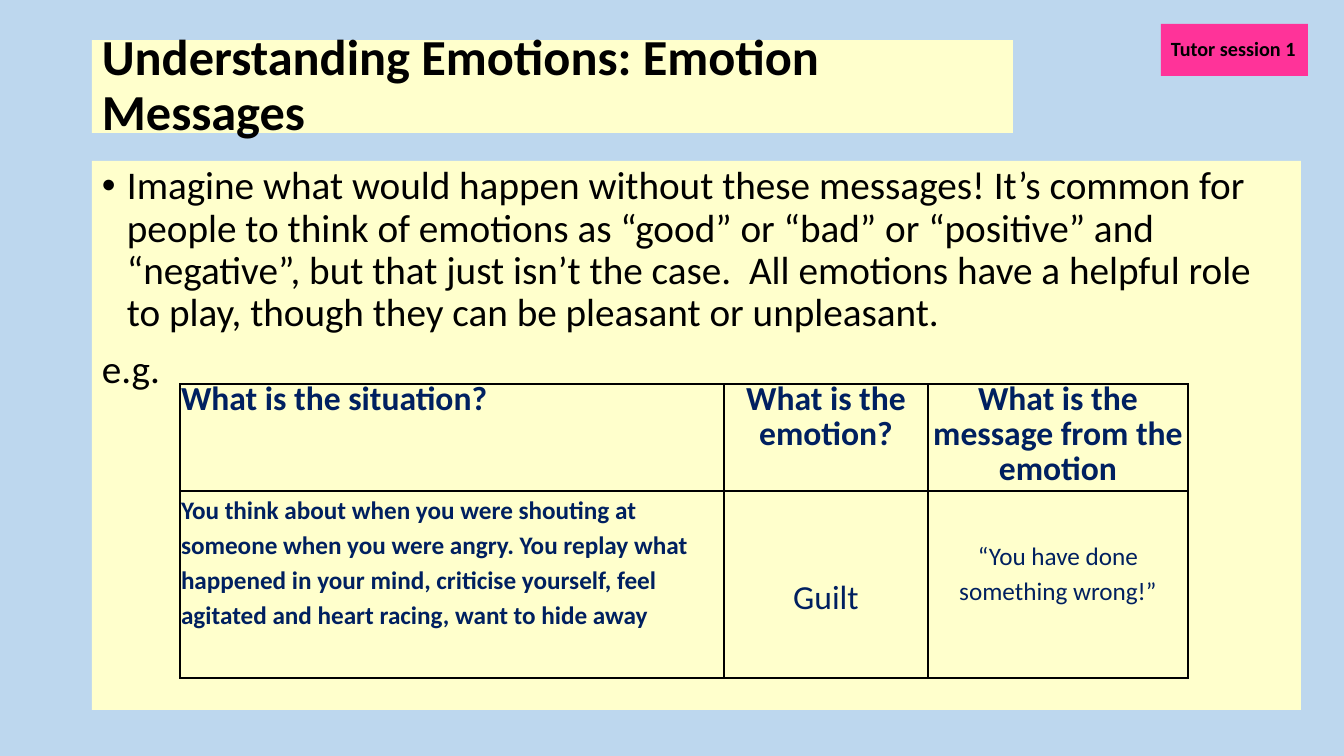
from lxml.etree import SubElement
from pptx import Presentation
from pptx.dml.color import RGBColor
from pptx.enum.shapes import MSO_SHAPE
from pptx.enum.text import MSO_ANCHOR, PP_ALIGN
from pptx.oxml.ns import qn
from pptx.util import Pt

WIDTH, HEIGHT = 1344, 756
EMU_PER_PX = 12192000 / WIDTH
BACKGROUND, CREAM, PINK = "BDD7EE", "FFFFCC", "FF3399"
BLACK, NAVY = "000000", "002060"

TITLE = "Understanding Emotions: Emotion Messages"
TAG = "Tutor session 1"
BODY = [
    "Imagine what would happen without these messages! It’s common for people "
    "to think of emotions as “good” or “bad” or “positive” and “negative”, but "
    "that just isn’t the case.\u00a0 All emotions have a helpful role to play, "
    "though they can be pleasant or unpleasant.",
    "e.g.",
]

COLUMNS = [544, 204, 260]
ROWS = [107, 187]
# Each cell: text, size, bold, top margin in px
CELLS = [
    [
        ("What is the situation?", 24, True, 1),
        ("What is the emotion?", 24, True, 1),
        ("What is the message from the emotion", 24, True, 1),
    ],
    [
        ("You think about when you were shouting at someone when you were angry. "
         "You replay what happened in your mind, criticise yourself, feel agitated "
         "and heart racing, want to hide away", 18, True, 1),
        ("Guilt", 24, False, 93),
        ("“You have done something wrong!”", 18, False, 47),
    ],
]


def px(length):
    return round(length * EMU_PER_PX)


def color(value):
    return RGBColor.from_string(value)


def paint(fill, value):
    fill.solid()
    fill.fore_color.rgb = color(value)


def style(para, size, bold, value, spacing, align=PP_ALIGN.LEFT):
    para.alignment = align
    para.line_spacing = spacing
    font = para.font
    font.name, font.size, font.bold = "Calibri", Pt(size), bold
    font.color.rgb = color(value)


def add_panel(page, bounds, fill, lines, size, bold, anchor=MSO_ANCHOR.MIDDLE):
    """Add a filled rectangle with left-aligned lines and return its paragraphs."""
    box = page.shapes.add_shape(MSO_SHAPE.RECTANGLE, *map(px, bounds))
    box.shadow.inherit = False
    paint(box.fill, fill)
    box.line.fill.background()
    frame = box.text_frame
    frame.word_wrap = True
    frame.vertical_anchor = anchor
    frame.text = "\n".join(lines)
    for para in frame.paragraphs:
        style(para, size, bold, BLACK, 0.9)
    return frame.paragraphs


def add_bullet(para, indent):
    properties = para._p.get_or_add_pPr()
    properties.set("marL", str(px(indent)))
    properties.set("indent", str(-px(indent)))
    SubElement(properties, qn("a:buFont"), typeface="Arial")
    SubElement(properties, qn("a:buChar"), char="•")


def add_borders(cell):
    properties = cell._tc.get_or_add_tcPr()
    for index, side in enumerate(("a:lnL", "a:lnR", "a:lnT", "a:lnB")):
        line = properties.makeelement(qn(side), {"w": str(Pt(1))})
        SubElement(SubElement(line, qn("a:solidFill")), qn("a:srgbClr"), val=BLACK)
        properties.insert(index, line)


def add_emotion_table(page, left, top):
    frame = page.shapes.add_table(len(ROWS), len(COLUMNS), px(left), px(top),
                                  px(sum(COLUMNS)), px(sum(ROWS)))
    table = frame.table
    table.first_row = table.horz_banding = False
    for column, width in zip(table.columns, COLUMNS):
        column.width = px(width)
    for row, height, contents in zip(table.rows, ROWS, CELLS):
        row.height = px(height)
        for index, (text, size, bold, margin) in enumerate(contents):
            cell = row.cells[index]
            cell.margin_left = cell.margin_right = cell.margin_bottom = px(1)
            cell.margin_top = px(margin)
            paint(cell.fill, CREAM)
            add_borders(cell)
            cell.text = text
            para = cell.text_frame.paragraphs[0]
            style(para, size, bold, NAVY, Pt(24.8),
                  PP_ALIGN.CENTER if index else PP_ALIGN.LEFT)
            para.space_after = Pt(8)


def main():
    deck = Presentation()
    deck.slide_width, deck.slide_height = px(WIDTH), px(HEIGHT)
    page = deck.slides.add_slide(deck.slide_layouts[6])
    paint(page.background.fill, BACKGROUND)

    add_panel(page, (92, 40, 921, 93), CREAM, [TITLE], 36, True)
    body = add_panel(page, (92, 161, 1209, 549), CREAM, BODY, 28, False,
                     MSO_ANCHOR.TOP)
    for para in body:
        para.space_before = Pt(10)
    add_bullet(body[0], 25)
    add_emotion_table(page, 180, 384)
    add_panel(page, (1161, 24, 147, 52), PINK, [TAG], 14.4, True)
    deck.save("out.pptx")


if __name__ == "__main__":
    main()
